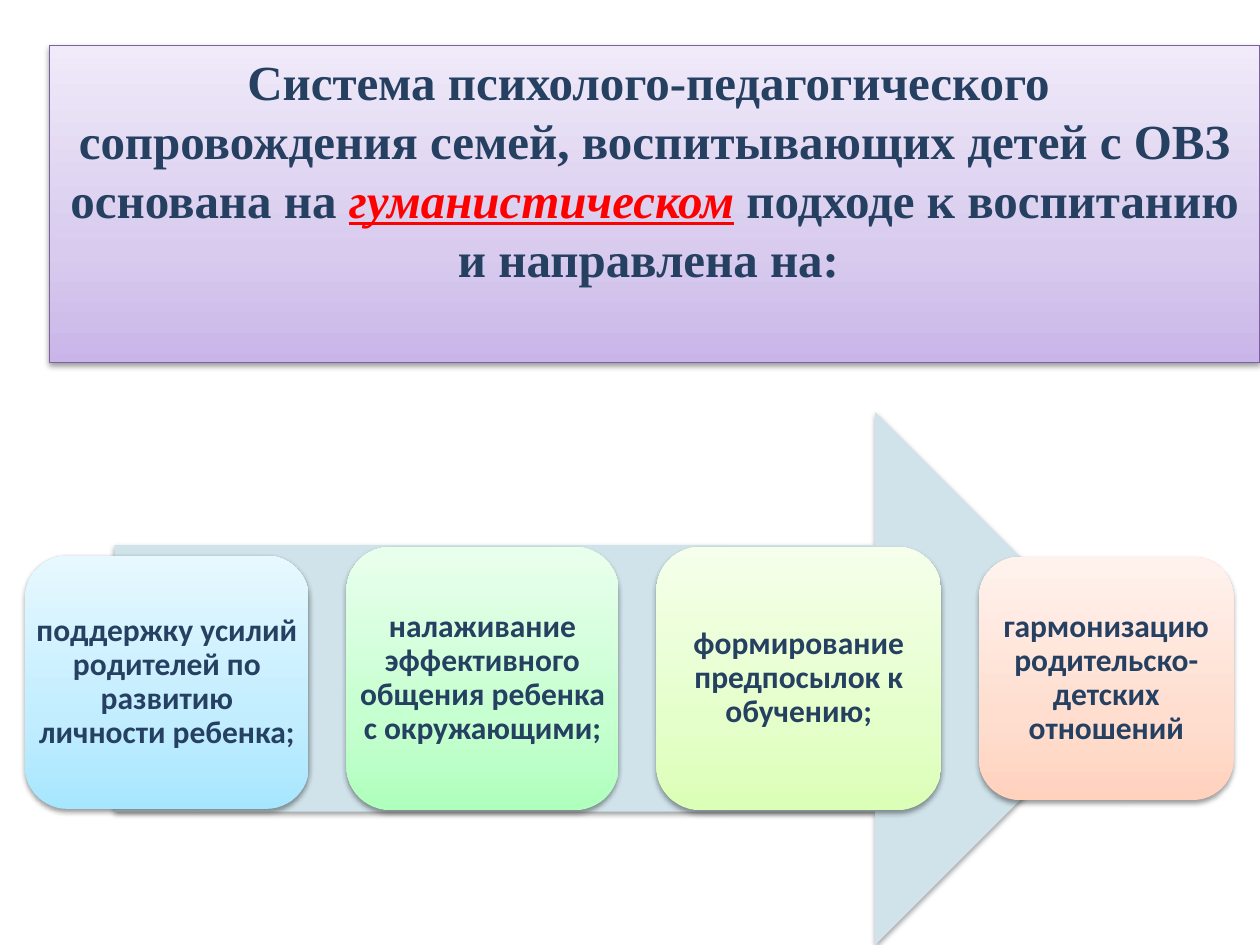
from copy import deepcopy
from dataclasses import dataclass

from lxml import etree
from pptx import Presentation
from pptx.dml.color import RGBColor
from pptx.enum import shapes, text
from pptx.oxml import ns
from pptx.util import Inches, Pt


@dataclass(frozen=True)
class Theme:
    ink: str = "254061"
    red: str = "FF0000"
    edge: str = "7D60A0"
    arrow: str = "D0E3EA"
    violet: tuple = ("C9B5E8", "D8CBEE", "F0EAF9")
    blue: tuple = ("A7E6FF", "C1EDFF", "E7F8FF")
    green: tuple = ("AFFFBD", "C6FFD0", "E9FFED")
    lime: tuple = ("DBFFB6", "E5FFCB", "F5FFEB")
    peach: tuple = ("FFD2BD", "FFDED0", "FFF2ED")
    head: int = 28
    body: int = 18


def block(kind, box, tones, edge=None):
    """Add a shadowed shape; three tones make a gradient from bottom to top."""
    shape = slide.shapes.add_shape(kind, *map(Inches, box))
    fill = shape.fill
    if len(tones) == 1:
        fill.solid()
        fill.fore_color.rgb = RGBColor.from_string(tones[0])
    else:
        fill.gradient()
        fill.gradient_angle = 90
        stops = shape.element.spPr.find(".//" + ns.qn("a:gsLst"))
        stops.append(deepcopy(stops[0]))
        for stop, tone, pos in zip(fill.gradient_stops, tones, (0, 0.35, 1)):
            stop.color.rgb = RGBColor.from_string(tone)
            stop.position = pos
    if edge:
        shape.line.color.rgb = RGBColor.from_string(edge)
        shape.line.width = Pt(0.75)
    else:
        shape.line.fill.background()
    shape.shadow.inherit = False
    effects = shape.element.spPr.find(ns.qn("a:effectLst"))
    glow = etree.SubElement(effects, ns.qn("a:outerShdw"), blurRad=str(Pt(3.1)),
                            dist=str(Pt(1.6)), dir="5400000", rotWithShape="0")
    black = etree.SubElement(glow, ns.qn("a:srgbClr"), val="000000")
    etree.SubElement(black, ns.qn("a:alpha"), val="38000")
    return shape


def write(para, words, font, size, color, slant=False):
    para.alignment = text.PP_ALIGN.CENTER
    run = para.add_run()
    run.text = words
    run.font.name = font
    run.font.size = Pt(size)
    run.font.bold = True
    run.font.color.rgb = RGBColor.from_string(color)
    if slant:
        run.font.italic = run.font.underline = True


theme = Theme()
deck = Presentation()
deck.slide_width, deck.slide_height = Inches(10), Inches(7.5)
slide = deck.slides.add_slide(deck.slide_layouts[6])
kinds = shapes.MSO_SHAPE

block(kinds.RIGHT_ARROW, (0.91, 3.27, 8.15, 4.23), (theme.arrow,))

# Goals: top, width, height, tones, words
goals = (
    (4.41, 2.25, 2.01, theme.blue, "поддержку усилий родителей по развитию личности ребенка;"),
    (4.34, 2.16, 2.09, theme.green, "налаживание эффективного общения ребенка с окружающими;"),
    (4.34, 2.26, 2.09, theme.lime, "формирование предпосылок к обучению;"),
    (4.42, 2.02, 1.93, theme.peach, "гармонизацию родительско-детских отношений"),
)
left, gap = 0.2, 0.3
for top, width, height, tones, words in goals:
    box = (left, top, width, height)
    block(kinds.ROUNDED_RECTANGLE, box, tones)
    # A label of its own spans the full card, past the rounded corners
    frame = slide.shapes.add_textbox(*map(Inches, box)).text_frame
    frame.word_wrap = True
    frame.vertical_anchor = text.MSO_ANCHOR.MIDDLE
    frame.margin_left = frame.margin_right = Inches(0.07)
    frame.margin_top = frame.margin_bottom = Inches(0.07)
    para = frame.paragraphs[0]
    para.line_spacing = 0.9
    write(para, words, font="Calibri", size=theme.body, color=theme.ink)
    left += width + gap

title = block(kinds.RECTANGLE, (0.39, 0.36, 9.61, 2.52), theme.violet, edge=theme.edge)
frame = title.text_frame
frame.word_wrap = True
frame.vertical_anchor = text.MSO_ANCHOR.TOP
lines = (
    (("Система психолого-педагогического ", theme.ink, False),),
    (("сопровождения семей, воспитывающих детей с ОВЗ основана на ", theme.ink, False),
     ("гуманистическом", theme.red, True),
     (" подходе к воспитанию и направлена на: ", theme.ink, False)),
)
for num, runs in enumerate(lines):
    para = frame.add_paragraph() if num else frame.paragraphs[0]
    for words, color, slant in runs:
        write(para, words, font="Times New Roman", size=theme.head, color=color, slant=slant)

deck.save("out.pptx")
